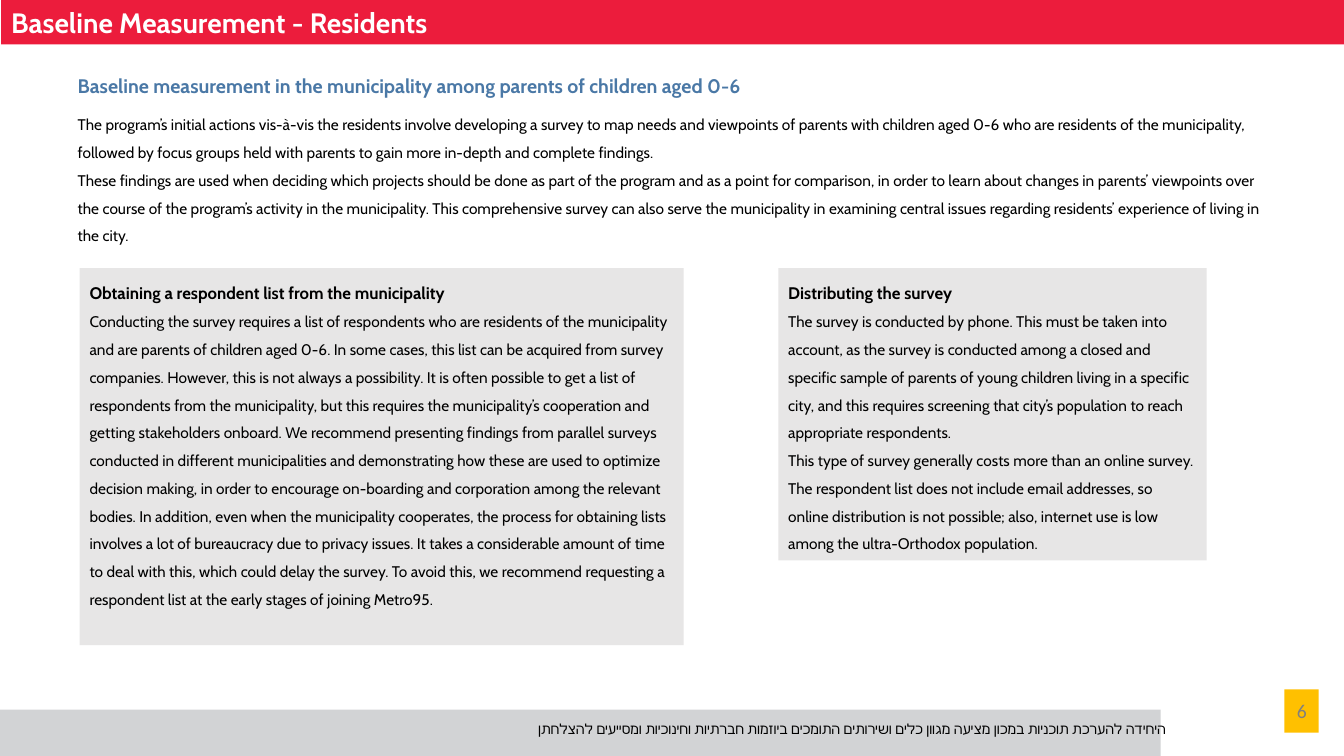
from copy import deepcopy

from pptx import Presentation
from pptx.dml.color import RGBColor
from pptx.enum.shapes import MSO_SHAPE as Shape
from pptx.enum.text import MSO_ANCHOR as Anchor, MSO_AUTO_SIZE as AutoSize, PP_ALIGN as Align
from pptx.oxml.ns import qn
from pptx.oxml.xmlchemy import OxmlElement as new_element
from pptx.util import Inches, Pt

WIDTH, HEIGHT = Inches(13.33), Inches(7.5)
COLORS = {"red": "EC1C3C", "blue": "4A78A6", "band": "D2D3D5", "card": "E7E6E6",
          "yellow": "FFC000", "gray": "808080", "black": "000000", "white": "FFFFFF"}
CARD_TOP = 35.47

INTRO_HEADING = "Baseline measurement in the municipality among parents of children aged 0-6"
INTRO = "\n".join([
    "The program’s initial actions vis-à-vis the residents involve developing a survey to map "
    "needs and viewpoints of parents with children aged 0-6 who are residents of the "
    "municipality, followed by focus groups held with parents to gain more in-depth and "
    "complete findings. ",
    "These findings are used when deciding which projects should be done as part of the program "
    "and as a point for comparison, in order to learn about changes in parents’ viewpoints over "
    "the course of the program’s activity in the municipality. This comprehensive survey can "
    "also serve the municipality in examining central issues regarding residents’ experience of "
    "living in the city."])
RESPONDENTS = " ".join([
    "Conducting the survey requires a list of respondents who are residents of the municipality "
    "and are parents of children aged 0-6.",
    "In some cases, this list can be acquired from survey companies.",
    "However, this is not always a possibility.",
    "It is often possible to get a list of respondents from the municipality, but this requires "
    "the municipality’s cooperation and getting stakeholders onboard.",
    "We recommend presenting findings from parallel surveys conducted in different "
    "municipalities and demonstrating how these are used to optimize decision making, in order "
    "to encourage on-boarding and corporation among the relevant bodies.",
    "In addition, even when the municipality cooperates, the process for obtaining lists "
    "involves a lot of bureaucracy due to privacy issues.",
    "It takes a considerable amount of time to deal with this, which could delay the survey.",
    "To avoid this, we recommend requesting a respondent list at the early stages of joining "
    "Metro95."])
PHONE = (
    "The survey is conducted by phone. This must be taken into account, as the survey is "
    "conducted among a closed and specific sample of parents of young children living in a "
    "specific city, and this requires screening that city’s population to reach appropriate "
    "respondents.")
COST = (
    "This type of survey generally costs more than an online survey. The respondent list does "
    "not include email addresses, so online distribution is not possible; also, internet use is "
    "low among the ultra-Orthodox population.")
FOOTER = ("היחידה להערכת תוכניות במכון מציעה מגוון כלים ושירותים התומכים "
          "ביוזמות חברתיות וחינוכיות ומסייעים להצלחתן")


def area(left, top, width, height):
    """Turn percentages of the slide into lengths."""
    return (int(WIDTH * left / 100), int(HEIGHT * top / 100),
            int(WIDTH * width / 100), int(HEIGHT * height / 100))


def paint(item, color):
    item.fill.solid()
    item.fill.fore_color.rgb = RGBColor.from_string(COLORS[color])


def move(placeholder, place):
    placeholder.left, placeholder.top, placeholder.width, placeholder.height = area(*place)


def add_block(page, place, color):
    block = page.shapes.add_shape(Shape.RECTANGLE, *area(*place))
    block.shadow.inherit = False
    paint(block, color)
    block.line.fill.background()
    return block


def write(para, text, size, color="black", bold=False, font="Cabin", align=Align.LEFT):
    para.text = text
    para.alignment = align
    para.space_before = Pt(0)
    for span in para.runs:
        span.font.name, span.font.size, span.font.bold = font, Pt(size), bold
        span.font.color.rgb = RGBColor.from_string(COLORS[color])
    # Line breaks take the size of the text around them
    for line_break in para._p.findall(qn("a:br")):
        line_break.append(deepcopy(para.runs[0].font._element))


def fill_frame(frame, heading, heading_size, heading_color, bodies, gap=0):
    """Write a bold heading and its body paragraphs, without bullets."""
    frame.word_wrap = True
    frame.auto_size = AutoSize.NONE
    frame.vertical_anchor = Anchor.TOP
    for index, text in enumerate([heading, *bodies]):
        para = frame.add_paragraph() if index else frame.paragraphs[0]
        if index:
            write(para, text, 11)
        else:
            write(para, text, heading_size, heading_color, bold=True)
        para.line_spacing = 1.5
        para.space_after = Pt(gap)
        properties = para._p.get_or_add_pPr()
        properties.set("marL", "0")
        properties.set("indent", "0")
        properties.append(new_element("a:buNone"))


def add_card(page, left, width, height, heading, bodies):
    card = add_block(page, (left, CARD_TOP, width, height), "card")
    fill_frame(card.text_frame, heading, 12, "black", bodies)


def add_label(page, place, text, size, color, font, anchor):
    box = page.shapes.add_textbox(*area(*place))
    box.text_frame.word_wrap = True
    box.text_frame.vertical_anchor = anchor
    write(box.text_frame.paragraphs[0], text, size, color, font=font, align=Align.RIGHT)


def main():
    deck = Presentation()
    deck.slide_width, deck.slide_height = WIDTH, HEIGHT
    page = deck.slides.add_slide(deck.slide_layouts[1])

    # Title bar
    title = page.shapes.title
    move(title, (0.08, 0, 99.92, 5.87))
    paint(title, "red")
    title.text_frame.auto_size = AutoSize.NONE
    title.text_frame.vertical_anchor = Anchor.MIDDLE
    write(title.text_frame.paragraphs[0], "Baseline Measurement - Residents", 20, "white", True)

    # Introduction
    body = page.placeholders[1]
    move(body, (5.03, 7.6, 90.1, 25.73))
    fill_frame(body.text_frame, INTRO_HEADING, 14, "blue", [INTRO], gap=6)

    # Cards
    add_card(page, 5.93, 44.94, 49.87,
             "Obtaining a respondent list from the municipality", [RESPONDENTS])
    add_card(page, 57.91, 31.88, 38.67, "Distributing the survey", [PHONE, COST])

    # Footer and page number
    add_block(page, (0, 93.87, 86.35, 6.13), "band")
    add_block(page, (95.57, 91.2, 2.55, 5.73), "yellow")
    add_label(page, (33.68, 94.67, 53.79, 3.6), FOOTER, 10, "black", "Roboto", Anchor.TOP)
    add_label(page, (92.72, 91.33, 5.25, 5.33), "6", 14, "gray", "Calibri", Anchor.MIDDLE)

    deck.save("out.pptx")


if __name__ == "__main__":
    main()
